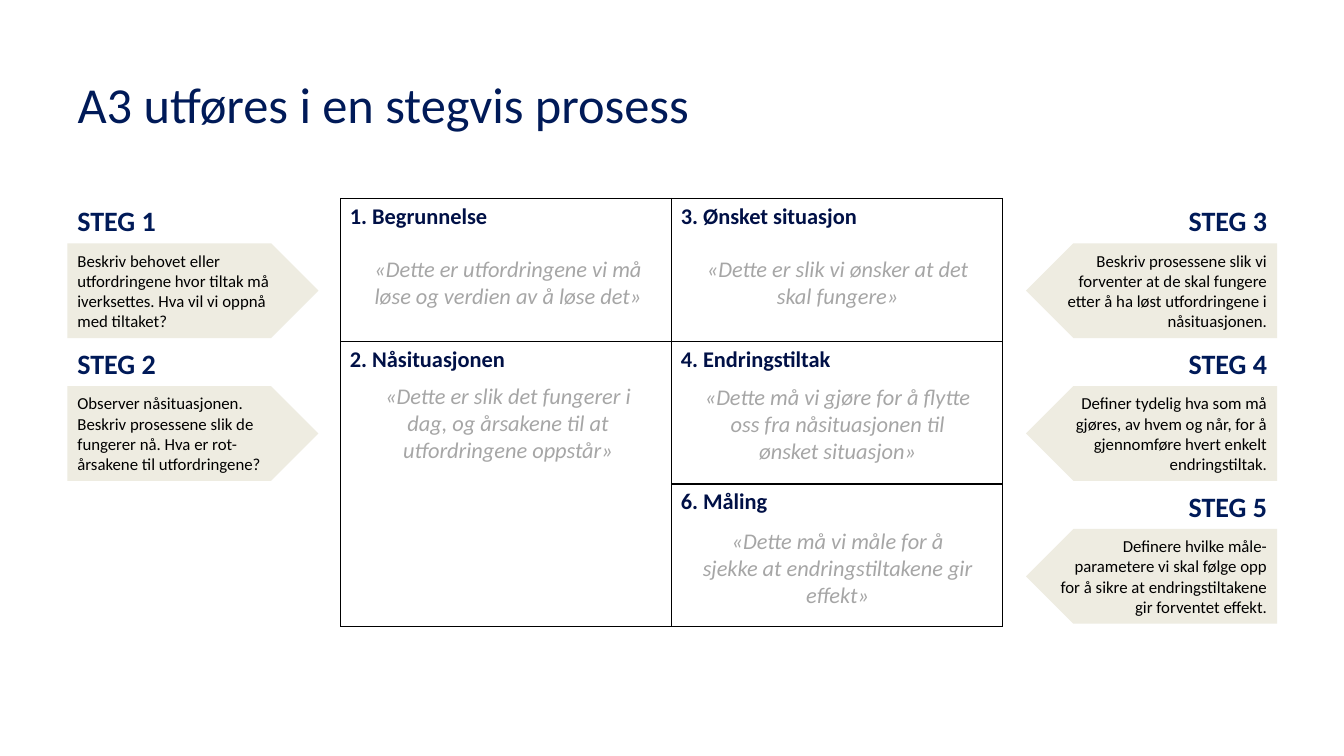
from dataclasses import dataclass

from lxml.etree import SubElement
from pptx import Presentation
from pptx.dml.color import RGBColor
from pptx.enum.shapes import MSO_SHAPE
from pptx.enum.text import MSO_ANCHOR, MSO_AUTO_SIZE, PP_ALIGN
from pptx.oxml.ns import qn
from pptx.slide import Slide
from pptx.table import _Cell as Cell
from pptx.text.text import TextFrame
from pptx.util import Pt

COLORS = {
    "title": "001A58",
    "heading": "001046",
    "quote": "A6A6A6",
    "arrow": "EEECE1",
    "black": "000000",
}
FONT = "Calibri"
GRID_LEFT, GRID_TOP = 243.4, 141.8
COLUMN_WIDTH, ROW_HEIGHT = 236.4, 102
MARGIN_LEFT, MARGIN_RIGHT = 48.2, 912.2
ARROW_WIDTH, ARROW_HEIGHT, ARROW_OFFSET = 179.3, 67.7, 32
LABEL_WIDTH, LABEL_HEIGHT = 92.9, 31.5
QUOTE_LEFTS = (259.2, 494.6)
QUOTE_WIDTH, QUOTE_HEIGHT = 207.4, 56.2


@dataclass(frozen=True)
class Step:
    label: str
    text: str
    row: int
    on_right: bool


@dataclass(frozen=True)
class Field:
    heading: str
    quote: tuple[str, ...]
    row: int
    column: int
    quote_offset: float


@dataclass(frozen=True)
class Style:
    size: float
    color: str
    bold: bool = False
    italic: bool = False
    align: PP_ALIGN = PP_ALIGN.LEFT


STEPS = (
    Step("STEG 1", "Beskriv behovet eller utfordringene hvor tiltak må iverksettes. "
         "Hva vil vi oppnå med tiltaket?", 0, False),
    Step("STEG 2", "Observer nåsituasjonen. Beskriv prosessene slik de fungerer nå. "
         "Hva er rot-årsakene til utfordringene?", 1, False),
    Step("STEG 3", "Beskriv prosessene slik vi forventer at de skal fungere etter å ha løst "
         "utfordringene i nåsituasjonen.", 0, True),
    Step("STEG 4", "Definer tydelig hva som må gjøres, av hvem og når, for å gjennomføre "
         "hvert enkelt endringstiltak.", 1, True),
    Step("STEG 5", "Definere hvilke måle-parametere vi skal følge opp for å sikre at "
         "endringstiltakene gir forventet effekt.", 2, True),
)
FIELDS = (
    Field("1. Begrunnelse",
          ("«Dette er utfordringene vi må løse og verdien av å løse det»",), 0, 0, 31.5),
    Field("2. Nåsituasjonen",
          ("«Dette er slik det fungerer i dag, og årsakene til at utfordringene oppstår»",),
          1, 0, 30),
    Field("3. Ønsket situasjon",
          ("«Dette er slik vi ønsker at det skal fungere»",), 0, 1, 31.5),
    Field("4. Endringstiltak",
          ("«Dette må vi gjøre for å flytte", "oss fra nåsituasjonen til", "ønsket situasjon»"),
          1, 1, 30.5),
    Field("6. Måling",
          ("«Dette må vi måle for å sjekke at endringstiltakene gir effekt»",), 2, 1, 31.5),
)


def write(frame: TextFrame, lines: tuple[str, ...], style: Style) -> None:
    for index, line in enumerate(lines):
        para = frame.add_paragraph() if index else frame.paragraphs[0]
        para.alignment = style.align
        span = para.add_run()
        span.text = line
        span.font.name = FONT
        span.font.size = Pt(style.size)
        span.font.bold = style.bold
        span.font.italic = style.italic
        span.font.color.rgb = RGBColor.from_string(COLORS[style.color])


def add_text(page: Slide, left: float, top: float, width: float, height: float,
             lines: tuple[str, ...], style: Style, anchor: MSO_ANCHOR) -> None:
    box = page.shapes.add_textbox(Pt(left), Pt(top), Pt(width), Pt(height))
    box.text_frame.word_wrap = True
    box.text_frame.vertical_anchor = anchor
    write(box.text_frame, lines, style)


def add_title(page: Slide, text: str) -> None:
    title = page.shapes.title
    title.left, title.top = Pt(MARGIN_LEFT), Pt(28.8)
    title.width, title.height = Pt(MARGIN_RIGHT - MARGIN_LEFT), Pt(90)
    title.text_frame.word_wrap = True
    title.text_frame.auto_size = MSO_AUTO_SIZE.NONE
    title.text_frame.vertical_anchor = MSO_ANCHOR.MIDDLE
    write(title.text_frame, (text,), Style(36, "title"))


def add_step(page: Slide, step: Step) -> None:
    align = PP_ALIGN.RIGHT if step.on_right else PP_ALIGN.LEFT
    top = GRID_TOP + step.row * ROW_HEIGHT
    arrow_left = MARGIN_RIGHT - ARROW_WIDTH if step.on_right else MARGIN_LEFT
    label_left = MARGIN_RIGHT - LABEL_WIDTH if step.on_right else MARGIN_LEFT
    arrow = page.shapes.add_shape(MSO_SHAPE.PENTAGON, Pt(arrow_left), Pt(top + ARROW_OFFSET),
                                  Pt(ARROW_WIDTH), Pt(ARROW_HEIGHT))
    arrow.shadow.inherit = False
    arrow.fill.solid()
    arrow.fill.fore_color.rgb = RGBColor.from_string(COLORS["arrow"])
    arrow.line.fill.background()
    if step.on_right:
        arrow.element.spPr.find(qn("a:xfrm")).set("flipH", "1")
    arrow.text_frame.word_wrap = True
    arrow.text_frame.vertical_anchor = MSO_ANCHOR.MIDDLE
    write(arrow.text_frame, (step.text,), Style(12, "black", align=align))
    add_text(page, label_left, top, LABEL_WIDTH, LABEL_HEIGHT, (step.label,),
             Style(20, "title", bold=True, align=align), MSO_ANCHOR.TOP)


def add_borders(cell: Cell) -> None:
    cell.fill.background()
    properties = cell._tc.get_or_add_tcPr()
    for index, side in enumerate(("lnL", "lnR", "lnT", "lnB")):
        line = SubElement(properties, qn(f"a:{side}"), w=str(Pt(1)))
        fill = SubElement(line, qn("a:solidFill"))
        SubElement(fill, qn("a:srgbClr"), val=COLORS["black"])
        properties.insert(index, line)


def add_grid(page: Slide) -> None:
    table = page.shapes.add_table(3, 2, Pt(GRID_LEFT), Pt(GRID_TOP),
                                  Pt(2 * COLUMN_WIDTH), Pt(3 * ROW_HEIGHT)).table
    table.first_row = False
    table.horz_banding = False
    for column in table.columns:
        column.width = Pt(COLUMN_WIDTH)
    for row in table.rows:
        row.height = Pt(ROW_HEIGHT)
    for cell in table.iter_cells():
        cell.margin_left = cell.margin_right = Pt(6.5)
        cell.margin_top = cell.margin_bottom = Pt(3.2)
        add_borders(cell)
    table.cell(1, 0).merge(table.cell(2, 0))
    for field in FIELDS:
        write(table.cell(field.row, field.column).text_frame, (field.heading,),
              Style(16, "heading", bold=True))


def add_quote(page: Slide, field: Field) -> None:
    top = GRID_TOP + field.row * ROW_HEIGHT + field.quote_offset
    add_text(page, QUOTE_LEFTS[field.column], top, QUOTE_WIDTH, QUOTE_HEIGHT, field.quote,
             Style(16, "quote", italic=True, align=PP_ALIGN.CENTER), MSO_ANCHOR.MIDDLE)


def main() -> None:
    deck = Presentation()
    deck.slide_width, deck.slide_height = Pt(960), Pt(540)
    page = deck.slides.add_slide(deck.slide_layouts[5])
    add_title(page, "A3 utføres i en stegvis prosess")
    add_grid(page)
    for step in STEPS:
        add_step(page, step)
    for field in FIELDS:
        add_quote(page, field)
    deck.save("out.pptx")


if __name__ == "__main__":
    main()
